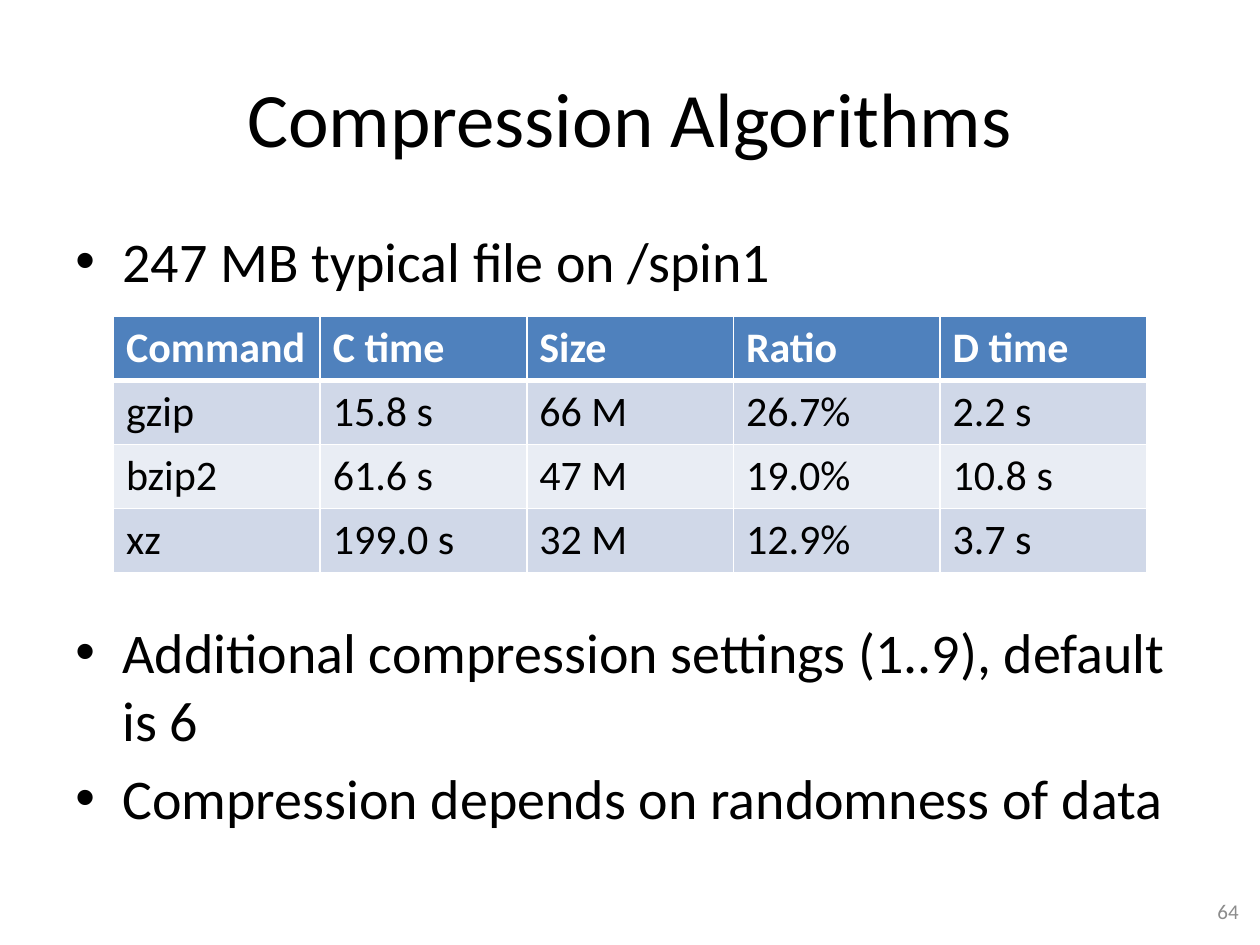
from dataclasses import dataclass

from lxml.etree import SubElement
from pptx import Presentation
from pptx.dml.color import RGBColor as Rgb
from pptx.enum.text import MSO_ANCHOR as Anchor, PP_ALIGN as Align
from pptx.oxml.ns import qn
from pptx.util import Cm, Pt


@dataclass(frozen=True)
class Theme:
    font: str = "Calibri"
    ink: str = "000000"
    paper: str = "FFFFFF"
    header: str = "4F81BD"
    bands: tuple = ("D0D8E8", "E9EDF4")
    muted: str = "8C8C8C"
    title_size: int = 44
    body_size: int = 32
    table_size: int = 24
    number_size: int = 12


class SlideBuilder:
    def __init__(self, slide, theme):
        self.slide = slide
        self.theme = theme

    def add_text(self, paragraph, wording, size, color, bold=False):
        run = paragraph.add_run()
        run.text = wording
        run.font.name = self.theme.font
        run.font.size = Pt(size)
        run.font.bold = bold
        run.font.color.rgb = Rgb.from_string(color)

    def frame(self, left, top, width, height, anchor=Anchor.TOP):
        area = self.slide.shapes.add_textbox(Cm(left), Cm(top), Cm(width), Cm(height))
        area.text_frame.word_wrap = True
        area.text_frame.vertical_anchor = anchor
        return area.text_frame

    def line(self, place, wording, size, color, align):
        paragraph = self.frame(*place, Anchor.MIDDLE).paragraphs[0]
        paragraph.alignment = align
        self.add_text(paragraph, wording, size, color)

    def bullets(self, place, points):
        body = self.frame(*place)
        for index, (wording, space) in enumerate(points):
            paragraph = body.add_paragraph() if index else body.paragraphs[0]
            props = paragraph._p.get_or_add_pPr()
            props.set("marL", str(Cm(0.95)))
            props.set("indent", str(-Cm(0.95)))
            SubElement(props, qn("a:buFont"), typeface="Arial")
            SubElement(props, qn("a:buChar"), char="•")
            paragraph.space_before = Pt(space)
            self.add_text(paragraph, wording, self.theme.body_size, self.theme.ink)

    def borders(self, cell, **widths):
        props = cell._tc.get_or_add_tcPr()
        for position, side in enumerate(("lnL", "lnR", "lnT", "lnB")):
            edge = SubElement(props, qn(f"a:{side}"), w=str(Pt(widths.get(side, 1))))
            fill = SubElement(edge, qn("a:solidFill"))
            SubElement(fill, qn("a:srgbClr"), val=self.theme.paper)
            props.insert(position, edge)

    def table(self, place, rows):
        left, top, width, height = map(Cm, place)
        grid = self.slide.shapes.add_table(
            len(rows), len(rows[0]), left, top, width, height
        ).table
        theme = self.theme
        for r, values in enumerate(rows):
            is_header = r == 0
            fill = theme.header if is_header else theme.bands[(r - 1) % 2]
            color = theme.paper if is_header else theme.ink
            for c, value in enumerate(values):
                cell = grid.cell(r, c)
                cell.fill.solid()
                cell.fill.fore_color.rgb = Rgb.from_string(fill)
                self.borders(cell, lnT=3 if r == 1 else 1, lnB=3 if is_header else 1)
                self.add_text(cell.text_frame.paragraphs[0], value,
                              theme.table_size, color, is_header)


def main():
    deck = Presentation()
    deck.slide_width, deck.slide_height = Cm(25.4), Cm(19.05)
    theme = Theme()
    page = SlideBuilder(deck.slides.add_slide(deck.slide_layouts[6]), theme)

    page.line((1.27, 0.76, 22.86, 3.18), "Compression Algorithms",
              theme.title_size, theme.ink, Align.CENTER)
    page.bullets((1.27, 4.45, 22.86, 12.57), [
        ("247 MB typical file on /spin1", 0),
        ("Additional compression settings (1..9), default is 6", 185),
        ("Compression depends on randomness of data", 6.4),
    ])
    page.line((19.3, 17.86, 5.92, 1.02), "64",
              theme.number_size, theme.muted, Align.RIGHT)
    page.table((2.29, 6.38, 20.83, 5.16), [
        ("Command", "C time", "Size", "Ratio", "D time"),
        ("gzip", "15.8 s", "66 M", "26.7%", "2.2 s"),
        ("bzip2", "61.6 s", "47 M", "19.0%", "10.8 s"),
        ("xz", "199.0 s", "32 M", "12.9%", "3.7 s"),
    ])
    deck.save("out.pptx")


if __name__ == "__main__":
    main()
